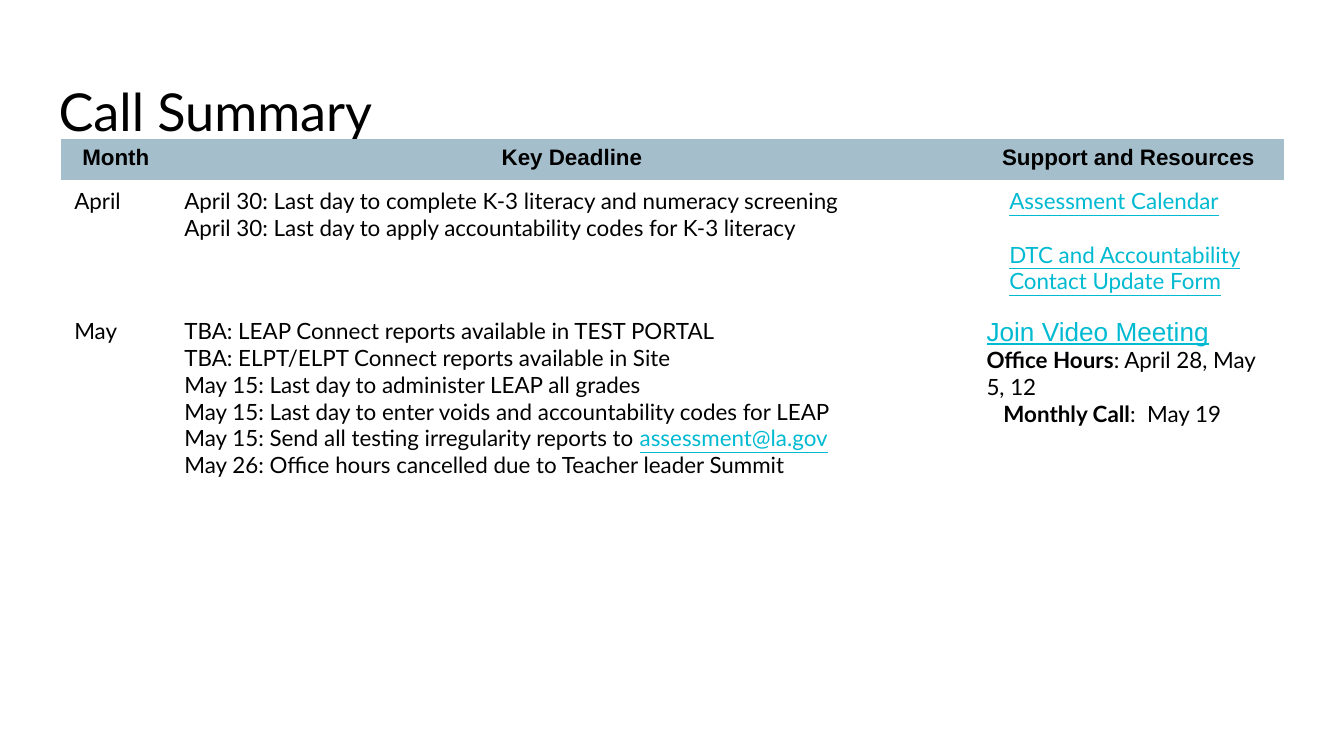
from pptx import Presentation
from pptx.dml.color import RGBColor
from pptx.enum.text import MSO_ANCHOR, PP_ALIGN
from pptx.oxml.ns import qn
from pptx.util import Cm, Pt

CENTER = PP_ALIGN.CENTER
TOP = MSO_ANCHOR.TOP
BLACK = RGBColor(0x00, 0x00, 0x00)
LINK_BLUE = RGBColor(0x00, 0xBA, 0xD2)
HEADER_BLUE = RGBColor(0xA4, 0xBE, 0xCC)
NO_STYLE_NO_GRID = "{2D5ABB26-0587-4C30-8999-92F81FD0307C}"

BODY = {"name": "Lato", "size": Pt(12), "bold": False, "color": BLACK}
TITLE = {**BODY, "size": Pt(28)}
HEADER = {**BODY, "name": "Arial", "bold": True}
BOLD = {**BODY, "bold": True}
LINK = {**BODY, "color": LINK_BLUE, "underline": True}
MEETING_LINK = {**LINK, "name": "Arial", "size": Pt(14)}

COLUMN_WIDTHS = [Cm(2.08), Cm(15.16), Cm(5.87)]
ROW_HEIGHTS = [Cm(0.79), Cm(2.46), Cm(4.19)]
HEADINGS = ["Month", "Key Deadline", "Support and Resources"]

APRIL_DEADLINES = [
    [("April 30: Last day to complete K-3 literacy and numeracy screening", BODY)],
    [("April 30: Last day to apply accountability codes for K-3 literacy", BODY)],
]
APRIL_RESOURCES = [
    [("Assessment Calendar", LINK)],
    [("DTC and Accountability Contact Update Form", LINK)],
]
MAY_DEADLINES = [
    [("TBA: LEAP Connect reports available in TEST PORTAL", BODY)],
    [("TBA: ELPT/ELPT Connect reports available in Site", BODY)],
    [("May 15: Last day to administer LEAP all grades", BODY)],
    [("May 15: Last day to enter voids and accountability codes for LEAP", BODY)],
    [("May 15: Send all testing irregularity reports to ", BODY),
     ("assessment@la.gov", LINK)],
    [("May 26: Office hours cancelled due to Teacher leader Summit", BODY)],
]
MAY_RESOURCES = [
    [("Join Video Meeting", MEETING_LINK)],
    [("Office Hours", BOLD), (": April 28, May 5, 12", BODY)],
    [("Monthly Call", BOLD), (":  May 19", BODY)],
]


def format_font(font, values):
    for name, value in values.items():
        if name == "color":
            font.color.rgb = value
        else:
            setattr(font, name, value)


def write_paragraphs(text_frame, paragraphs):
    for index, runs in enumerate(paragraphs):
        paragraph = text_frame.add_paragraph() if index else text_frame.paragraphs[0]
        for text, values in runs:
            run = paragraph.add_run()
            run.text = text
            format_font(run.font, values)


def indent_paragraph(paragraph, indent):
    paragraph._p.get_or_add_pPr().set("marL", str(indent))


def add_title(slide):
    shape = slide.shapes.add_textbox(Cm(0.86), Cm(1.24), Cm(23.67), Cm(1.6))
    text_frame = shape.text_frame
    margins = ("margin_left", "margin_top", "margin_right", "margin_bottom")
    for name, value in {**dict.fromkeys(margins, Cm(0.25)),
                        "word_wrap": True, "vertical_anchor": TOP}.items():
        setattr(text_frame, name, value)
    write_paragraphs(text_frame, [[("Call Summary", TITLE)]])


def add_summary_table(slide):
    rows = [
        [[[(heading, HEADER)]] for heading in HEADINGS],
        [[[("April", BODY)]], APRIL_DEADLINES, APRIL_RESOURCES],
        [[[("May", BODY)]], MAY_DEADLINES, MAY_RESOURCES],
    ]
    table = slide.shapes.add_table(
        len(rows), len(HEADINGS), Cm(1.15), Cm(2.62),
        sum(COLUMN_WIDTHS), sum(ROW_HEIGHTS)).table
    table.first_row = table.horz_banding = False
    table._tbl.tblPr.find(qn("a:tableStyleId")).text = NO_STYLE_NO_GRID
    for column, width in zip(table.columns, COLUMN_WIDTHS):
        column.width = width
    for row, height in zip(table.rows, ROW_HEIGHTS):
        row.height = height
    for row_index, row in enumerate(rows):
        for column_index, paragraphs in enumerate(row):
            cell = table.cell(row_index, column_index)
            write_paragraphs(cell.text_frame, paragraphs)
            if row_index == 0:
                cell.fill.solid()
                cell.fill.fore_color.rgb = HEADER_BLUE
                cell.text_frame.paragraphs[0].alignment = CENTER
            else:
                cell.fill.background()
    return table


def arrange_resources(table):
    april = table.cell(1, 2).text_frame.paragraphs
    for paragraph in april:
        indent_paragraph(paragraph, Cm(0.43))
    april[1].space_before = Pt(14.4)
    indent_paragraph(table.cell(2, 2).text_frame.paragraphs[2], Cm(0.32))


def main():
    presentation = Presentation()
    presentation.slide_width = Cm(25.4)
    presentation.slide_height = Cm(14.29)
    slide = presentation.slides.add_slide(presentation.slide_layouts[6])
    add_title(slide)
    arrange_resources(add_summary_table(slide))
    presentation.save("out.pptx")


if __name__ == "__main__":
    main()
